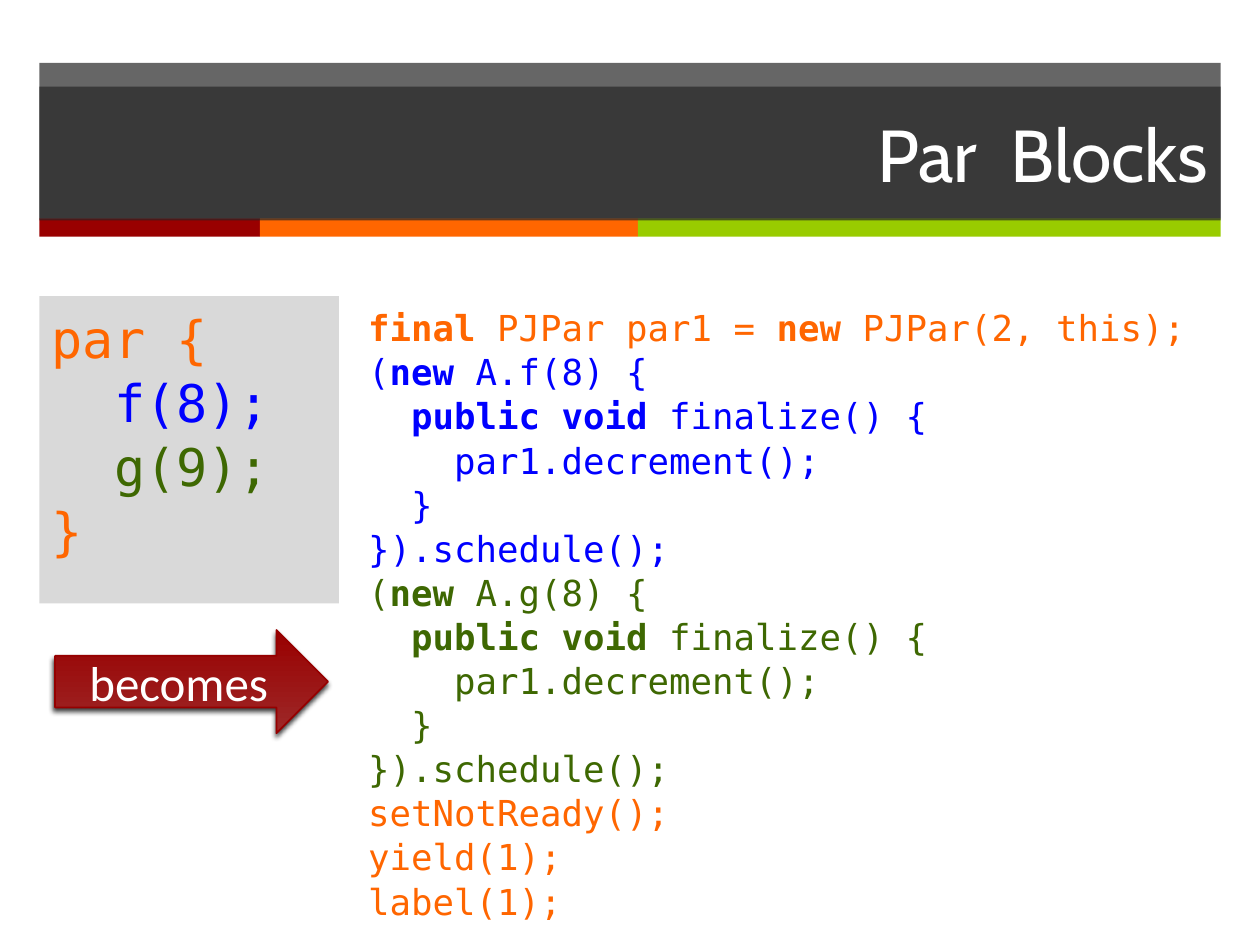
from pptx import Presentation
from pptx.dml.color import RGBColor
from pptx.enum.shapes import MSO_SHAPE as SHAPE
from pptx.enum.text import MSO_ANCHOR as ANCHOR, PP_ALIGN as ALIGN
from pptx.oxml import parse_xml
from pptx.oxml.ns import nsdecls, qn
from pptx.util import Pt
from lxml import etree

MONO = "DejaVu Sans Mono"
ORANGE, BLUE, GREEN = "FF6600", "0000FF", "3E6802"
RED, LIME, DARK, GREY, WHITE = "990000", "99CC00", "262626", "D9D9D9", "FFFFFF"


def rgb(value):
    return RGBColor.from_string(value)


def add_box(s, box, fill=None, alpha=None, kind=SHAPE.RECTANGLE):
    sp = s.shapes.add_shape(kind, *[Pt(v) for v in box])
    sp.shadow.inherit = False
    sp.line.fill.background()
    if fill:
        sp.fill.solid()
        sp.fill.fore_color.rgb = rgb(fill)
    else:
        sp.fill.background()
    if alpha:
        color = sp.fill._xPr.find(".//" + qn("a:srgbClr"))
        etree.SubElement(color, qn("a:alpha")).set("val", str(alpha * 1000))
    return sp


def add_text(sp, runs, size, font, align=ALIGN.LEFT, anchor=ANCHOR.TOP,
             spacing=None, top=3.6):
    """Write (text, color, bold) runs in one paragraph; \\n breaks the line."""
    tf = sp.text_frame
    tf.word_wrap = True
    tf.vertical_anchor = anchor
    tf.margin_top = Pt(top)
    p = tf.paragraphs[0]
    p.alignment = align
    if spacing:
        p.line_spacing = spacing
    for text, color, bold in runs:
        for i, part in enumerate(text.split("\n")):
            if i:
                p.add_line_break()
                # A break takes the size and font of its line
                rpr = etree.SubElement(p._p[-1], qn("a:rPr"))
                rpr.set("sz", str(round(size * 100)))
                etree.SubElement(rpr, qn("a:latin")).set("typeface", font)
            if part:
                r = p.add_run()
                r.text = part
                r.font.size, r.font.name = Pt(size), font
                r.font.bold, r.font.color.rgb = bold, rgb(color)


def add_header(s, left, top, width):
    # Two translucent bands overlap to make the darker title bar
    add_box(s, (left, top, width, 89), DARK, 70)
    x = left
    for w, color in ((126, RED), (216, ORANGE), (width - 342, LIME)):
        add_box(s, (x, top + 88.75, w, 10.5), color)
        x += w
    title = add_box(s, (left, top + 13.5, width, 76.5), DARK, 70)
    add_text(title, [("Par  Blocks", WHITE, False)], 42, "Cabin",
             ALIGN.RIGHT, ANCHOR.MIDDLE)


def add_code(s, box, runs, size, fill=None):
    add_text(add_box(s, box, fill), runs, size, MONO, spacing=1.03, top=5)


def add_arrow(s, box):
    sp = add_box(s, box, RED, kind=SHAPE.RIGHT_ARROW)
    sp.fill.gradient()
    sp.fill.gradient_angle = 90
    for stop, color in zip(sp.fill.gradient_stops, ("9D2828", RED)):
        stop.color.rgb = rgb(color)
    sp.line.color.rgb = rgb("960000")
    sp.line.width = Pt(1)
    # Soft drop shadow
    effects = sp._element.spPr.find(qn("a:effectLst"))
    effects.append(parse_xml(
        f'<a:outerShdw {nsdecls("a")} blurRad="38100" dist="25400" dir="6600000" '
        'rotWithShape="0"><a:srgbClr val="000000"><a:alpha val="75000"/>'
        '</a:srgbClr></a:outerShdw>'))
    add_text(sp, [("becomes", WHITE, False)], 28, "Calibri",
             ALIGN.CENTER, ANCHOR.MIDDLE)


def schedule_call(name, color):
    return [("(", color, False), ("new ", color, True),
            (f"A.{name}(8) {{\n  ", color, False),
            ("public void", color, True),
            (" finalize() {\n    par1.decrement();\n  }\n}).schedule();\n",
             color, False)]


def main():
    prs = Presentation()
    prs.slide_width, prs.slide_height = Pt(720), Pt(540)
    s = prs.slides.add_slide(prs.slide_layouts[6])

    add_header(s, 22.5, 36, 675)

    # Source code on the left
    source = [("par {\n  ", ORANGE, False), ("f(8);\n  ", BLUE, False),
              ("g(9);\n", GREEN, False), ("}", ORANGE, False)]
    add_code(s, (22.5, 169.2, 171.2, 175.7), source, 29.6, GREY)

    # Generated code on the right
    generated = [("final ", ORANGE, True), ("PJPar par1 = ", ORANGE, False),
                 ("new ", ORANGE, True), ("PJPar(2, this);\n", ORANGE, False),
                 *schedule_call("f", BLUE), *schedule_call("g", GREEN),
                 ("setNotReady();\nyield(1);\nlabel(1);", ORANGE, False)]
    add_code(s, (203.3, 169.2, 482.4, 363.6), generated, 20.4)

    add_arrow(s, (31.5, 360, 156, 59))
    prs.save("out.pptx")


if __name__ == "__main__":
    main()
